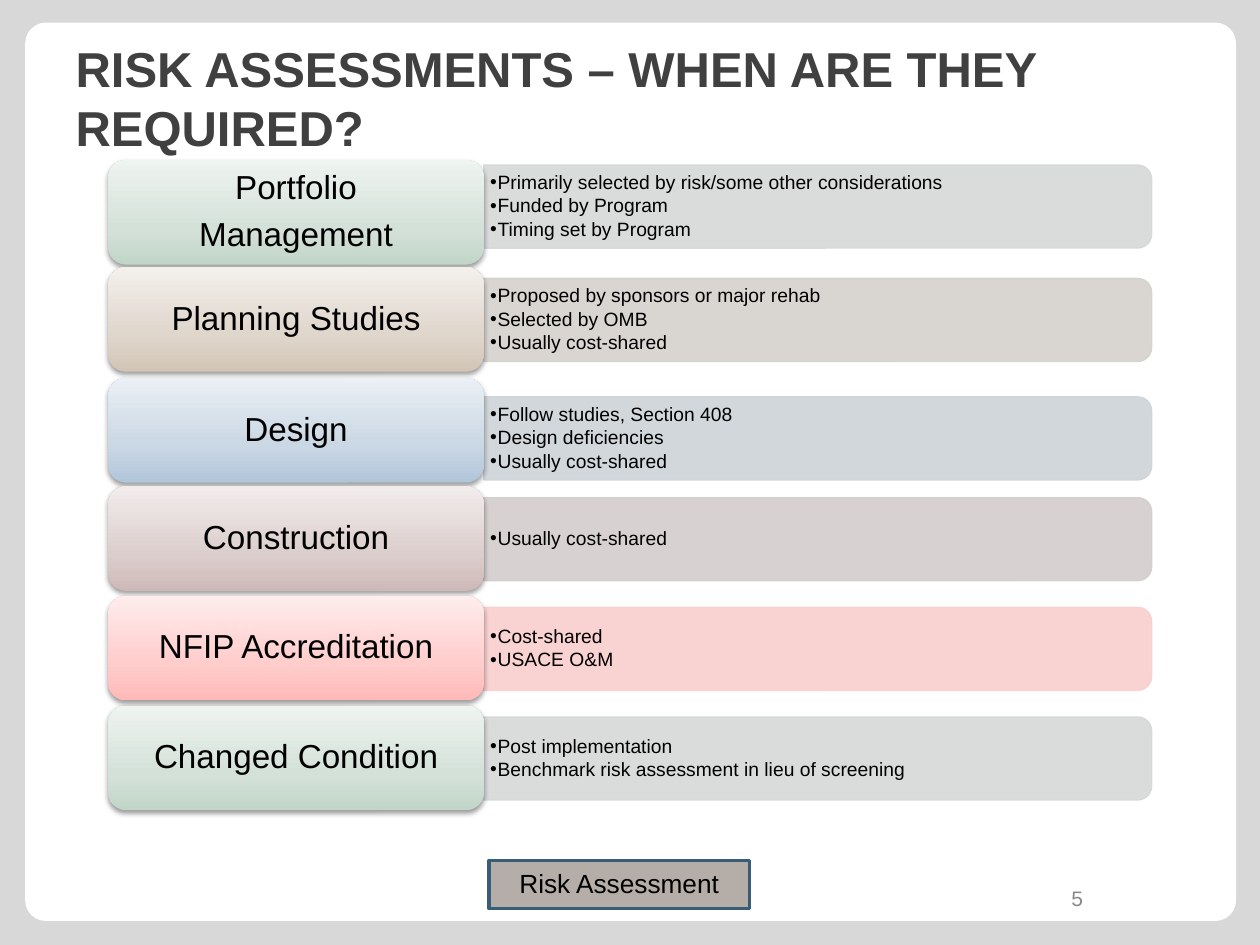
from lxml.etree import SubElement
from pptx import Presentation
from pptx.dml.color import RGBColor
from pptx.enum.shapes import MSO_SHAPE as Shape
from pptx.enum.text import MSO_ANCHOR as Anchor, MSO_AUTO_SIZE as AutoSize, PP_ALIGN as Align
from pptx.oxml.ns import qn
from pptx.util import Pt

EMU_PER_PX = 9144  # 100 px to the inch
FONT = "Arial"
COLORS = {
    "background": "D8D8D8", "panel": "FFFFFF", "title": "404040", "text": "000000",
    "footer": "B5AEA8", "footer_line": "385D76", "number": "898989",
}
# Each theme: label gradient from bottom to top, then the detail bar
THEMES = {
    "green": (("C2D5C9", "D4E1D9", "EEF4F0"), "D5D9D6"),
    "tan": (("D2C5B6", "DFD6CC", "F3F0EB"), "D5D2CE"),
    "blue": (("B2C6DA", "CAD7E4", "EAF0F5"), "CED3D8"),
    "mauve": (("CEB9B7", "DCCECD", "F2ECEC"), "D3CECD"),
    "red": (("FFB9B7", "FFCDCC", "FFECEC"), "F9CFCE"),
}
GRADIENT_STOPS = (0, 35, 100)
LABEL_LEFT, LABEL_WIDTH, LABEL_HEIGHT = 86, 298, 83
BAR_WIDTH, BAR_HEIGHT = 530, 66
# Label top, bar top, theme, label lines, detail lines
ROWS = [
    (127, 131, "green", ["Portfolio", "Management"],
     ["Primarily selected by risk/some other considerations",
      "Funded by Program", "Timing set by Program"]),
    (212, 221, "tan", ["Planning Studies"],
     ["Proposed by sponsors or major rehab", "Selected by OMB", "Usually cost-shared"]),
    (300, 315, "blue", ["Design"],
     ["Follow studies, Section 408", "Design deficiencies", "Usually cost-shared"]),
    (386, 395, "mauve", ["Construction"], ["Usually cost-shared"]),
    (473, 482, "red", ["NFIP Accreditation"], ["Cost-shared", "USACE O&M"]),
    (560, 569, "green", ["Changed Condition"],
     ["Post implementation", "Benchmark risk assessment in lieu of screening"]),
]


def px(value):
    return int(value * EMU_PER_PX)


def box_px(*box):
    return [px(value) for value in box]


def rgb(value):
    return RGBColor.from_string(value)


def add_bullet(paragraph):
    properties = paragraph._p.get_or_add_pPr()
    properties.set("lvl", "1")
    properties.set("marL", str(px(6)))
    properties.set("indent", str(px(-6)))
    SubElement(properties, qn("a:buFont")).set("typeface", FONT)
    SubElement(properties, qn("a:buChar")).set("char", "•")


def write_text(shape, lines, size, color=COLORS["text"], bold=False, align=Align.LEFT,
               insets=(10, 5), spacing=None, after=None, bullets=False):
    frame = shape.text_frame
    frame.word_wrap = True
    frame.auto_size = AutoSize.NONE
    frame.vertical_anchor = Anchor.MIDDLE
    frame.margin_left = frame.margin_right = px(insets[0])
    frame.margin_top = frame.margin_bottom = px(insets[1])
    for index, line in enumerate(lines):
        paragraph = frame.add_paragraph() if index else frame.paragraphs[0]
        paragraph.alignment = align
        if spacing:
            paragraph.line_spacing = spacing
        if after:
            paragraph.space_after = Pt(after)
        if bullets:
            add_bullet(paragraph)
        run = paragraph.add_run()
        run.text = line
        run.font.name, run.font.size, run.font.bold = FONT, Pt(size), bold
        run.font.color.rgb = rgb(color)


def add_box(slide, kind, box, fill=None, line=None, line_width=0.75):
    shape = slide.shapes.add_shape(kind, *box_px(*box))
    shape.shadow.inherit = False
    if fill:
        shape.fill.solid()
        shape.fill.fore_color.rgb = rgb(fill)
    if line:
        shape.line.color.rgb = rgb(line)
        shape.line.width = Pt(line_width)
    else:
        shape.line.fill.background()
    return shape


def add_color(parent, color, alpha=None):
    element = SubElement(parent, qn("a:srgbClr"), val=color)
    if alpha:
        SubElement(element, qn("a:alpha"), val=str(alpha * 1000))


def set_gradient(shape, colors):
    shape.fill.gradient()
    shape.fill.gradient_angle = 90
    stops = shape._element.spPr.find(qn("a:gradFill")).find(qn("a:gsLst"))
    for stop in list(stops):
        stops.remove(stop)
    for position, color in zip(GRADIENT_STOPS, colors):
        add_color(SubElement(stops, qn("a:gs"), pos=str(position * 1000)), color)


def set_shadow(shape):
    effects = shape._element.spPr.find(qn("a:effectLst"))
    shadow = SubElement(effects, qn("a:outerShdw"), blurRad=str(Pt(3.1)), dist=str(Pt(1.6)),
                        dir="5400000", rotWithShape="0")
    add_color(shadow, COLORS["text"], 38)


def add_detail_bar(slide, left, top, width, height, color, lines):
    # A tall shape turned on its side, so that the right corners are the round ones
    turned = (left + (width - height) / 2, top - (width - height) / 2, height, width)
    bar = add_box(slide, Shape.ROUND_2_SAME_RECTANGLE, turned, color, color)
    bar.rotation = 90
    for element in list(bar._element.spPr.iter(qn("a:srgbClr"))):
        SubElement(element, qn("a:alpha"), val="90000")
    text_box = slide.shapes.add_textbox(*box_px(left, top + 3, width - 4, height - 6))
    write_text(text_box, lines, 11, insets=(5, 2), spacing=0.9, after=1.5, bullets=True)


def add_label(slide, left, top, width, height, colors, lines):
    label = add_box(slide, Shape.ROUNDED_RECTANGLE, (left, top, width, height))
    set_gradient(label, colors)
    set_shadow(label)
    write_text(label, lines, 19, align=Align.CENTER, insets=(8, 4), spacing=0.9, after=6)


def add_rows(slide):
    for label_top, bar_top, theme, label_lines, detail_lines in ROWS:
        gradient, bar_color = THEMES[theme]
        add_detail_bar(slide, LABEL_LEFT + LABEL_WIDTH, bar_top, BAR_WIDTH, BAR_HEIGHT,
                       bar_color, detail_lines)
        add_label(slide, LABEL_LEFT, label_top, LABEL_WIDTH, LABEL_HEIGHT,
                  gradient, label_lines)


def add_background(slide):
    slide.background.fill.solid()
    slide.background.fill.fore_color.rgb = rgb(COLORS["background"])
    panel = add_box(slide, Shape.ROUNDED_RECTANGLE, (20, 18, 961, 713), COLORS["panel"])
    panel.adjustments[0] = 0.023
    slide.shapes._spTree.insert(2, panel._element)  # behind the title


def add_title(slide, *box):
    title = slide.shapes.title
    title.left, title.top, title.width, title.height = box_px(*box)
    write_text(title, ["RISK ASSESSMENTS – WHEN ARE THEY REQUIRED?"], 28,
               COLORS["title"], bold=True)


def add_footer(slide):
    footer = add_box(slide, Shape.RECTANGLE, (388, 683, 207, 38), COLORS["footer"],
                     COLORS["footer_line"], 2)
    write_text(footer, ["Risk Assessment"], 15, align=Align.CENTER, insets=(12, 7),
               spacing=0.9)
    number = slide.shapes.add_textbox(*box_px(815, 693, 80, 40))
    write_text(number, ["5"], 12, COLORS["number"], align=Align.CENTER)


def main():
    presentation = Presentation()
    presentation.slide_width, presentation.slide_height = px(1000), px(750)
    slide = presentation.slides.add_slide(presentation.slide_layouts[5])
    add_background(slide)
    add_title(slide, 50, 30, 900, 95)
    add_rows(slide)
    add_footer(slide)
    presentation.save("out.pptx")


if __name__ == "__main__":
    main()
